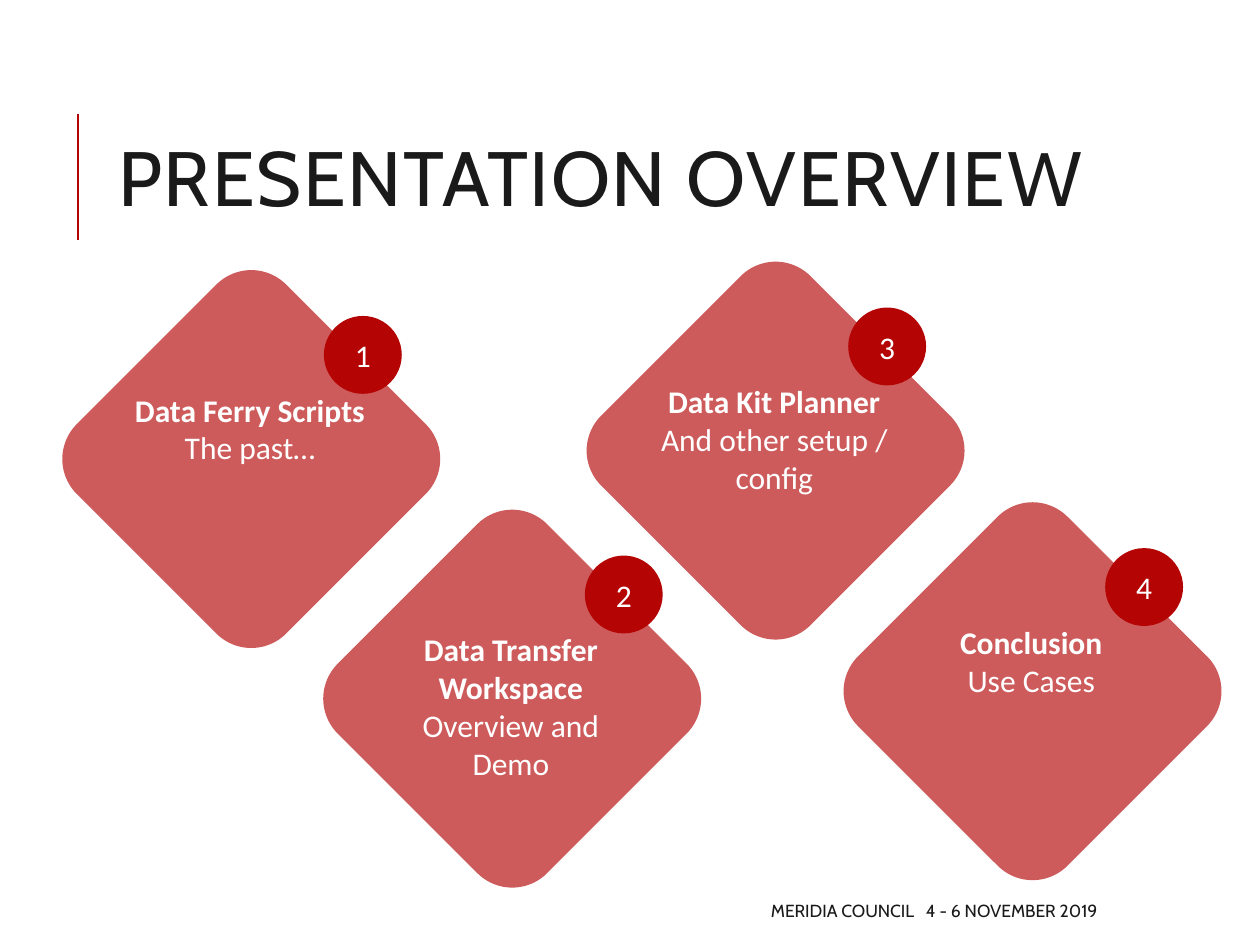
"""Build the presentation overview slide with four numbered topic diamonds."""
import pptx
import pptx.dml.color
import pptx.enum.shapes
import pptx.enum.text
import pptx.oxml
import pptx.oxml.ns
import pptx.util
from pptx.util import Cm

TITLE = "PRESENTATION OVERVIEW"
FOOTER = "MERIDIA COUNCIL   4 - 6 NOVEMBER 2019"
TOPICS = [
    {"heading": "Data Ferry Scripts", "detail": "The past…", "at": (2.08, 6.27), "height": 1.8},
    {"heading": "Data Transfer Workspace", "detail": "Overview and Demo", "at": (7.34, 11.1), "height": 3.33},
    {"heading": "Data Kit Planner", "detail": "And other setup / config", "at": (12.65, 6.1), "height": 2.57},
    {"heading": "Conclusion", "detail": "Use Cases", "at": (17.83, 10.95), "height": 1.8},
]
THEME = {
    "red": pptx.dml.color.RGBColor.from_string("B40404"),
    "ink": pptx.dml.color.RGBColor.from_string("1A1A1A"),
    "white": pptx.dml.color.RGBColor.from_string("FFFFFF"),
    "display": "Cabin",
    "body": "Calibri",
    "title_size": pptx.util.Pt(44),
    "body_size": pptx.util.Pt(18),
    "footer_size": pptx.util.Pt(10),
    "diamond_opacity": 65,
}
DIAMOND, BADGE = 5.97, 1.57
BADGE_OFFSET, CAPTION_OFFSET = (4.45, 0.1), (0.1, 1.48)
CAPTION_WIDTH = 5.72
ALIGN = pptx.enum.text.PP_ALIGN
ANCHOR = pptx.enum.text.MSO_ANCHOR
FIT = pptx.enum.text.MSO_AUTO_SIZE
SHAPE = pptx.enum.shapes.MSO_SHAPE


def apply(target, values):
    """Set every named attribute on the target."""
    for name, value in values.items():
        setattr(target, name, value)


def append_effect(parent, tag, **attributes):
    """Append one empty DrawingML element to the parent."""
    child = pptx.oxml.parse_xml(f"<a:{tag} {pptx.oxml.ns.nsdecls('a')}/>")
    for name, value in attributes.items():
        child.set(name, str(value))
    parent.append(child)


def write(frame, lines, align, **frame_format):
    """Fill a frame with paragraphs of (text, font format)."""
    apply(frame, {"word_wrap": True, **frame_format})
    for index, (text, font_format) in enumerate(lines):
        paragraph = frame.add_paragraph() if index else frame.paragraphs[0]
        paragraph.alignment = align
        run = paragraph.add_run()
        run.text = text
        run.font.color.rgb = font_format["color"]
        apply(run.font, {key: value for key, value in font_format.items() if key != "color"})


def add_solid(slide, kind, left, top, size):
    """Add a square, unlined red preset shape."""
    solid = slide.shapes.add_shape(kind, Cm(left), Cm(top), Cm(size), Cm(size))
    solid.shadow.inherit = False
    solid.fill.solid()
    solid.fill.fore_color.rgb = THEME["red"]
    solid.line.fill.background()
    return solid


def add_topic(slide, number, topic):
    """Add a diamond with its numbered badge and caption."""
    left, top = topic["at"]
    plain = {"name": THEME["body"], "size": THEME["body_size"], "color": THEME["white"], "bold": False}
    diamond = add_solid(slide, SHAPE.ROUNDED_RECTANGLE, left, top, DIAMOND)
    diamond.rotation = 45
    color = diamond.fill._xPr.find(".//" + pptx.oxml.ns.qn("a:srgbClr"))
    append_effect(color, "alpha", val=THEME["diamond_opacity"] * 1000)

    badge = add_solid(slide, SHAPE.OVAL, left + BADGE_OFFSET[0], top + BADGE_OFFSET[1], BADGE)
    write(badge.text_frame, [(str(number), plain)], ALIGN.CENTER, vertical_anchor=ANCHOR.MIDDLE)

    caption = slide.shapes.add_textbox(
        Cm(left + CAPTION_OFFSET[0]), Cm(top + CAPTION_OFFSET[1]), Cm(CAPTION_WIDTH), Cm(topic["height"]))
    lines = [(topic["heading"], {**plain, "bold": True}), (topic["detail"], plain)]
    write(caption.text_frame, lines, ALIGN.CENTER, auto_size=FIT.SHAPE_TO_FIT_TEXT)


def add_title(slide):
    """Place the title and the red rule beside it."""
    rule = slide.shapes.add_connector(
        pptx.enum.shapes.MSO_CONNECTOR.STRAIGHT, Cm(1.57), Cm(4.83), Cm(1.57), Cm(2.29))
    rule.line.color.rgb = THEME["red"]
    rule.line.width = pptx.util.Pt(1.5)
    append_effect(rule._element.spPr, "effectLst")

    title = slide.shapes.title
    apply(title, {"left": Cm(2.13), "top": Cm(1.63), "width": Cm(20.24), "height": Cm(4.17)})
    font = {"name": THEME["display"], "size": THEME["title_size"], "color": THEME["ink"]}
    write(title.text_frame, [(TITLE, font)], ALIGN.LEFT, vertical_anchor=ANCHOR.MIDDLE, auto_size=FIT.NONE)
    heading = title.text_frame.paragraphs[0]
    heading.line_spacing = 0.8
    heading.runs[0].font._element.set("spc", "100")


def add_footer(slide):
    """Add the event line at the foot of the slide."""
    footer = slide.shapes.add_textbox(Cm(10.08), Cm(17.98), Cm(12.29), Cm(0.76))
    font = {"name": THEME["display"], "size": THEME["footer_size"], "color": THEME["ink"]}
    write(footer.text_frame, [(FOOTER, font)], ALIGN.RIGHT, vertical_anchor=ANCHOR.MIDDLE)


def main():
    """Assemble and save the slide."""
    deck = pptx.Presentation()
    apply(deck, {"slide_width": Cm(25.4), "slide_height": Cm(19.05)})
    slide = deck.slides.add_slide(deck.slide_layouts.get_by_name("Title Only"))
    add_title(slide)
    for number, topic in enumerate(TOPICS, start=1):
        add_topic(slide, number, topic)
    add_footer(slide)
    deck.save("out.pptx")


if __name__ == "__main__":
    main()
